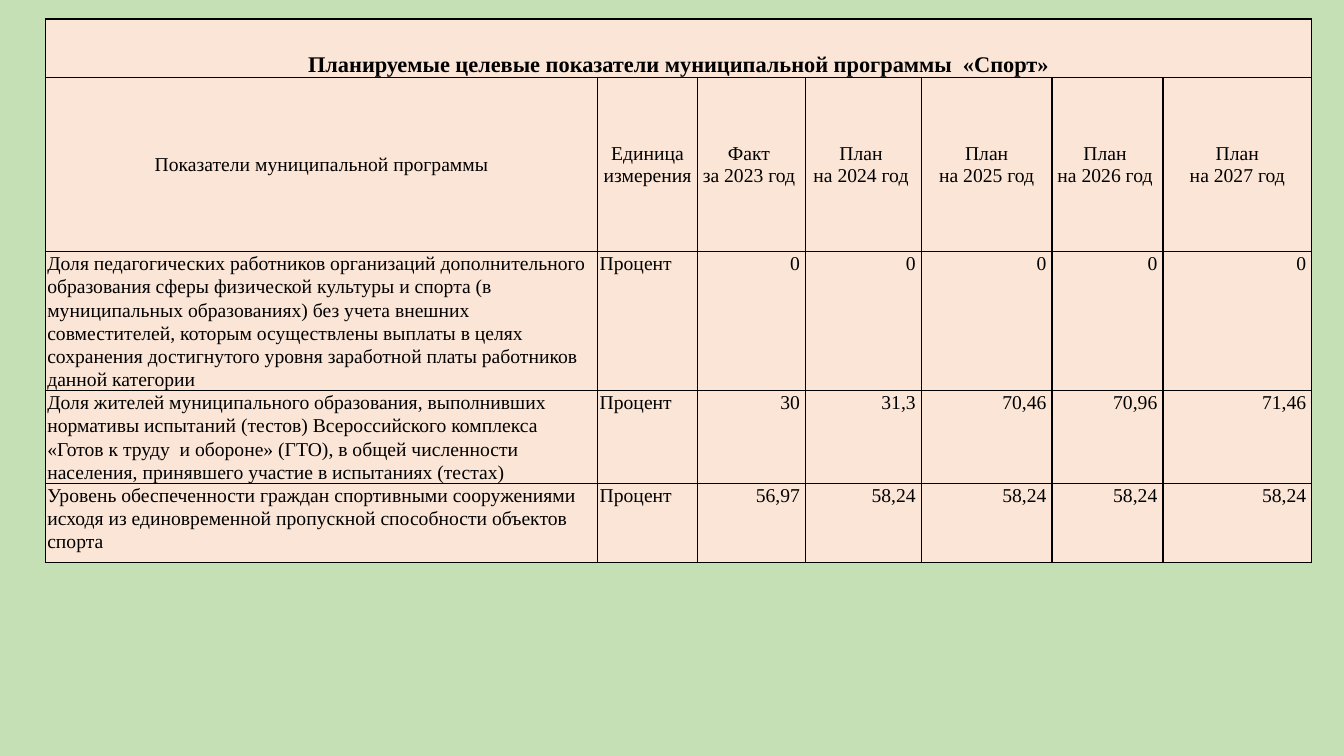
from pptx import Presentation
from pptx.dml.color import RGBColor
from pptx.enum import text
from pptx.oxml import parse_xml
from pptx.oxml import ns
from pptx.util import Pt

HUES = {"back": "C5E0B4", "cell": "FBE5D6", "ink": "000000"}
FONT = "Times New Roman"
LEFT, MID, RIGHT = text.PP_ALIGN.LEFT, text.PP_ALIGN.CENTER, text.PP_ALIGN.RIGHT

TITLE = "Планируемые целевые показатели муниципальной программы  «Спорт»"
HEADS = ["Показатели муниципальной программы", "Единица измерения",
         "Факт \nза 2023 год ", "План \nна 2024 год ", "План\n на 2025 год ",
         "План \nна 2026 год ", "План\n на 2027 год "]
GOALS = [
    ["Доля педагогических работников организаций дополнительного образования "
     "сферы физической культуры и спорта (в муниципальных образованиях) без учета "
     "внешних совместителей, которым осуществлены выплаты в целях сохранения "
     "достигнутого уровня заработной платы работников данной категории",
     "Процент", "0", "0", "0", "0", "0"],
    ["Доля жителей муниципального образования, выполнивших нормативы испытаний "
     "(тестов) Всероссийского комплекса «Готов к труду  и обороне» (ГТО), в общей "
     "численности населения, принявшего участие в испытаниях (тестах)",
     "Процент", "30", "31,3", "70,46", "70,96", "71,46"],
    ["Уровень обеспеченности граждан спортивными сооружениями исходя из "
     "единовременной пропускной способности объектов спорта",
     "Процент", "56,97", "58,24", "58,24", "58,24", "58,24"],
]
WIDTHS = [394.6, 71.2, 77.3, 82.7, 93.4, 79.2, 106.3]
HEIGHTS = [41.8, 124.4, 98.8, 65.8, 56.2]


def write(cell, words, align, size=14, bold=False, space=None):
    frame = cell.text_frame
    for i, line in enumerate(words.split("\n")):
        para = frame.add_paragraph() if i else frame.paragraphs[0]
        para.alignment = align
        if space:
            para.line_spacing = space
        run = para.add_run()
        run.text = line
        run.font.name, run.font.size, run.font.bold = FONT, Pt(size), bold
        run.font.color.rgb = RGBColor.from_string(HUES["ink"])


def dress(cell, anchor, left, right, top):
    cell.vertical_anchor = anchor
    cell.margin_left, cell.margin_right = Pt(left), Pt(right)
    cell.margin_top, cell.margin_bottom = Pt(top), Pt(0)
    props = cell._tc.get_or_add_tcPr()
    for side in ("lnL", "lnR", "lnT", "lnB"):
        props.append(parse_xml(
            f'<a:{side} {ns.nsdecls("a")} w="{Pt(1)}"><a:solidFill>'
            f'<a:srgbClr val="{HUES["ink"]}"/></a:solidFill></a:{side}>'))
    cell.fill.solid()
    cell.fill.fore_color.rgb = RGBColor.from_string(HUES["cell"])


# Slide and background
deck = Presentation()
deck.slide_width, deck.slide_height = Pt(960), Pt(540)
slide = deck.slides.add_slide(deck.slide_layouts[6])
slide.background.fill.solid()
slide.background.fill.fore_color.rgb = RGBColor.from_string(HUES["back"])

# Table grid
grid = slide.shapes.add_table(len(HEIGHTS), len(WIDTHS), Pt(32.4), Pt(13.6),
                              Pt(sum(WIDTHS)), Pt(sum(HEIGHTS))).table
for col, width in zip(grid.columns, WIDTHS):
    col.width = Pt(width)
for row, height in zip(grid.rows, HEIGHTS):
    row.height = Pt(height)

# Title row
for cell in grid.rows[0].cells:
    dress(cell, text.MSO_ANCHOR.BOTTOM, 0.7, 0.7, 0.7)
grid.cell(0, 0).merge(grid.cell(0, len(WIDTHS) - 1))
write(grid.cell(0, 0), TITLE, MID, 16, True)

# Column heads
for cell, head in zip(grid.rows[1].cells, HEADS):
    dress(cell, text.MSO_ANCHOR.MIDDLE, 0.7, 0.7, 0.7)
    write(cell, head, MID)

# Goals and their values
for r, goal in enumerate(GOALS, 2):
    for c, words in enumerate(goal):
        cell = grid.cell(r, c)
        dress(cell, text.MSO_ANCHOR.TOP, 1.4, 4 if c > 1 else 0, 0)
        write(cell, words, RIGHT if c > 1 else LEFT, space=1.07)

deck.save("out.pptx")
